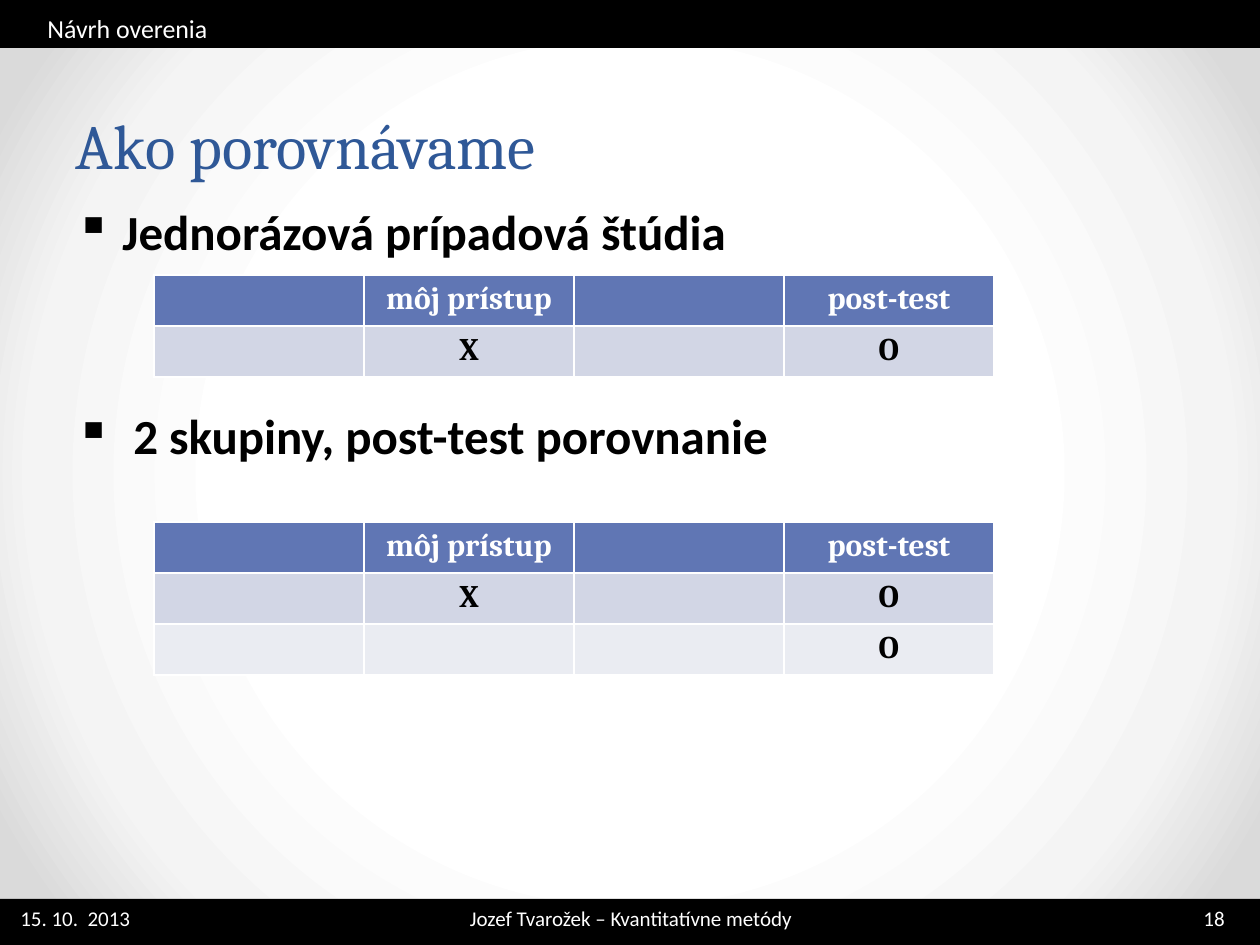
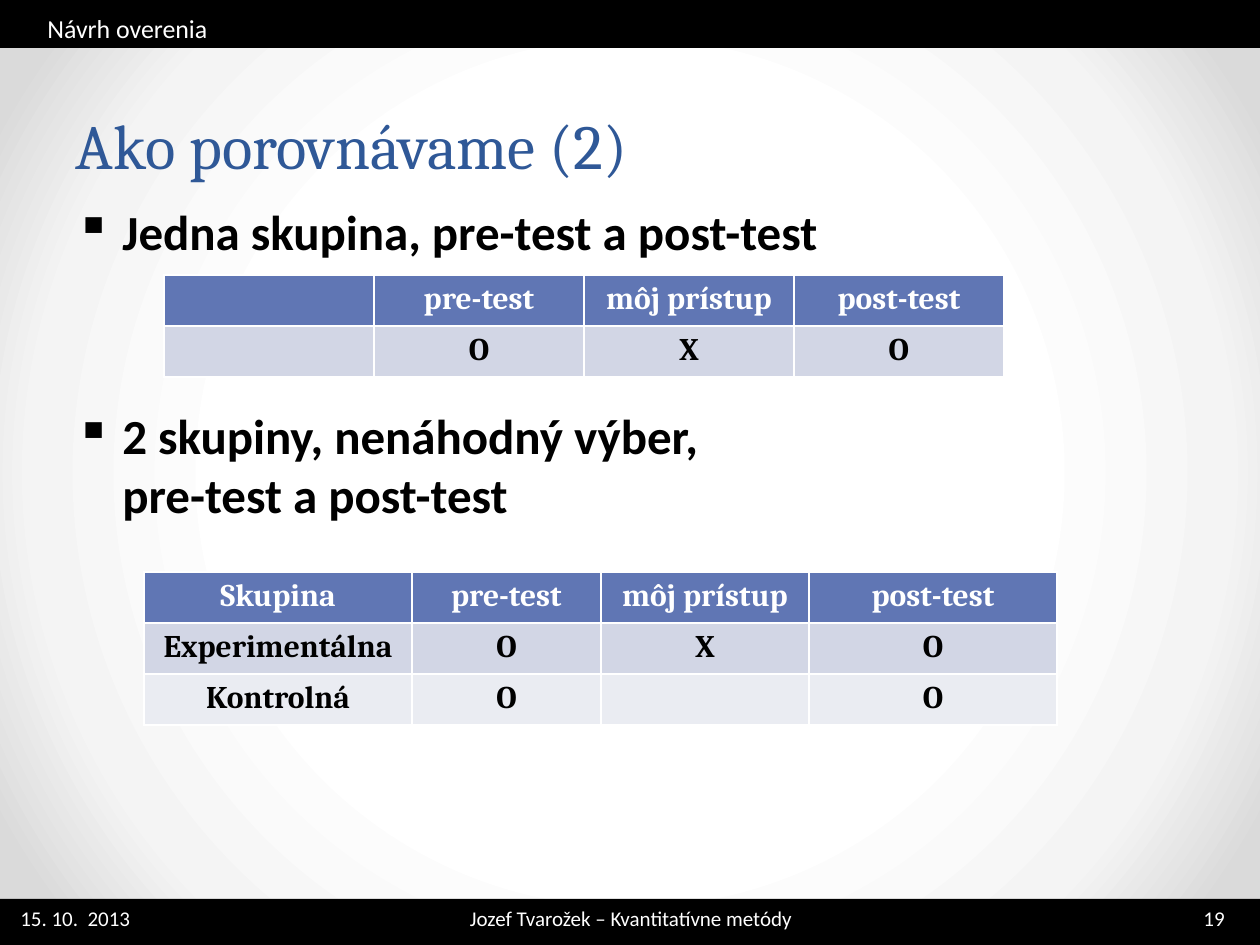
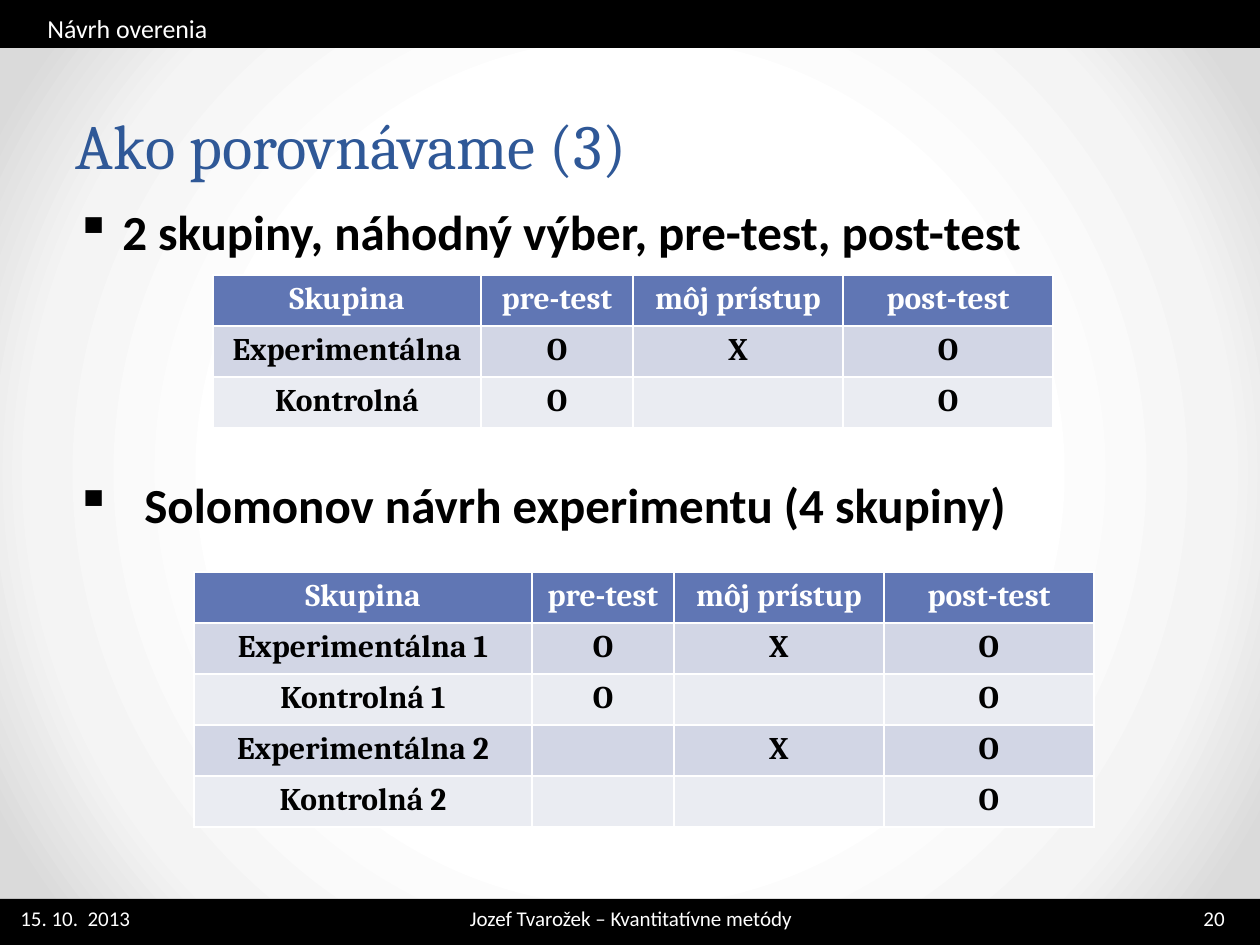
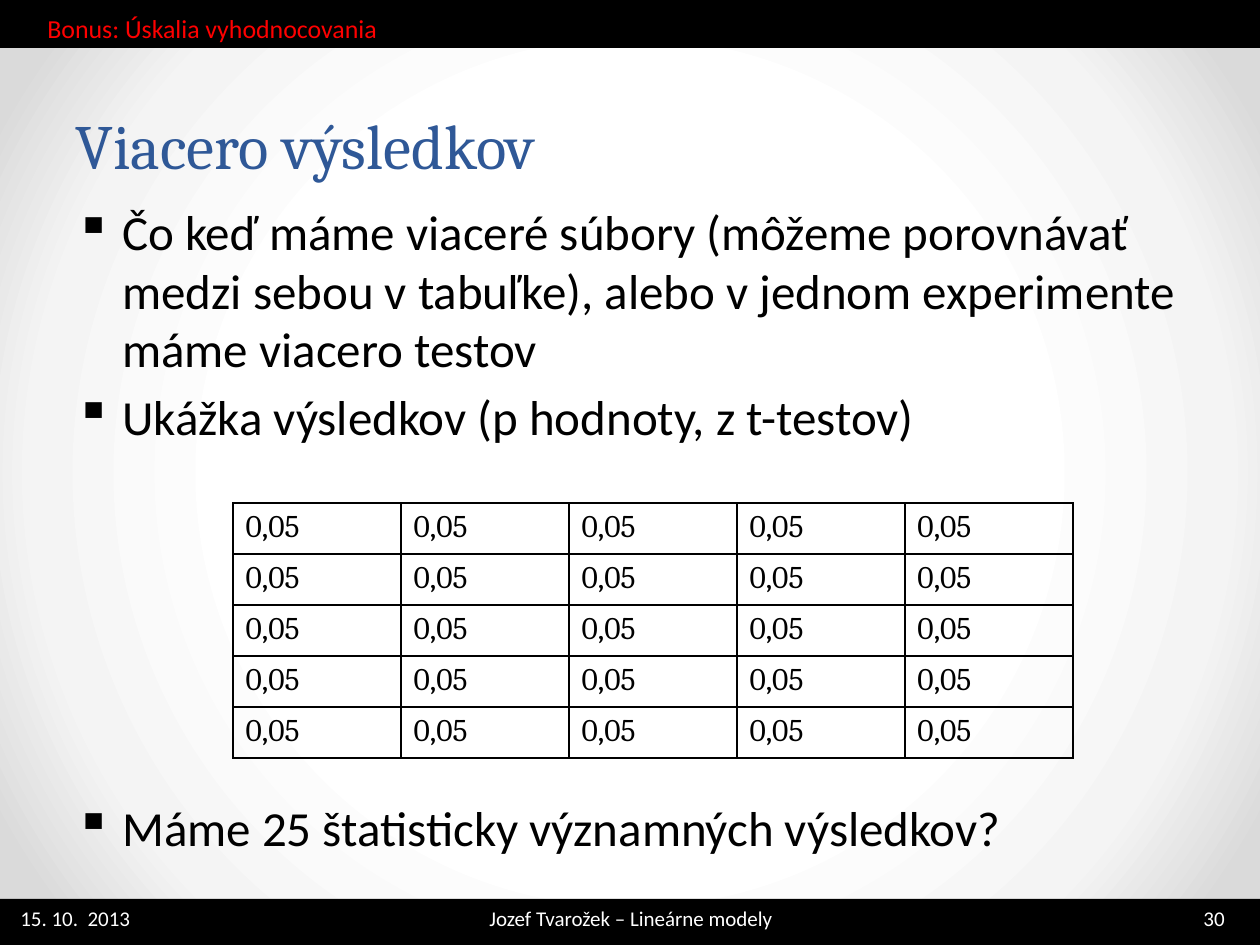
from pptx import Presentation
from pptx.dml.color import RGBColor
from pptx.enum.shapes import MSO_SHAPE
from pptx.enum.text import MSO_ANCHOR, MSO_AUTO_SIZE, PP_ALIGN
from pptx.oxml import parse_xml
from pptx.oxml.ns import nsdecls, qn
from pptx.util import Emu, Pt

RECT = MSO_SHAPE.RECTANGLE
MIDDLE = MSO_ANCHOR.MIDDLE
NO_FIT = MSO_AUTO_SIZE.NONE
LEFT, CENTER = PP_ALIGN.LEFT, PP_ALIGN.CENTER

SCALE = 914400 / 126
SLIDE_W, SLIDE_H = 1260, 945
BAND_H, FOOT_Y = 48, 899
ROW_H = 51
COLORS = {
    "band": "000000", "text": "000000", "light": "FFFFFF", "title": "2F5897",
    "alert": "FF0000", "header": "6076B4", "odd": "D2D6E5", "even": "EAECF2",
}
BODY_FONT, HEAD_FONT = "Calibri", "Cambria"
BACKDROP = [(50, "FFFFFF"), (76, "F4F4F4"), (92, "DADADA")]
BODY_BOX = (63, 195, 1134, 684)
HANG = 47
BULLET_GAP, BLANK_LINE = 5, 39.2

DATE = "15. 10.  2013"
DESIGN = "Návrh overenia"
METHODS = "Jozef Tvarožek – Kvantitatívne metódy"
GROUPS = ["Skupina", "pre-test", "môj prístup", "post-test"]

SLIDES = [
    dict(number=18, title="Ako porovnávame", kicker=DESIGN, footer=METHODS,
         bullets=[("Jednorázová prípadová štúdia", 0, 0),
                  ("2 skupiny, post-test porovnanie", 2, 11)],
         tables=[(154, 275, [210] * 4,
                  [["", "môj prístup", "", "post-test"], ["", "X", "", "O"]]),
                 (154, 522, [210] * 4,
                  [["", "môj prístup", "", "post-test"], ["", "X", "", "O"],
                   ["", "", "", "O"]])]),
    dict(number=19, title="Ako porovnávame (2)", kicker=DESIGN, footer=METHODS,
         bullets=[("Jedna skupina, pre-test a post-test", 0, 0),
                  ("2 skupiny, nenáhodný výber,\vpre-test a post-test", 2, 0)],
         tables=[(164, 275, [210] * 4,
                  [["", "pre-test", "môj prístup", "post-test"],
                   ["", "O", "X", "O"]]),
                 (144, 572, [268, 189, 208, 248],
                  [GROUPS, ["Experimentálna", "O", "X", "O"],
                   ["Kontrolná", "O", "", "O"]])]),
    dict(number=20, title="Ako porovnávame (3)", kicker=DESIGN, footer=METHODS,
         bullets=[("2 skupiny, náhodný výber, pre-test, post-test", 0, 0),
                  ("Solomonov návrh experimentu (4 skupiny)", 3, 22)],
         tables=[(213, 275, [268, 152, 210, 210],
                  [GROUPS, ["Experimentálna", "O", "X", "O"],
                   ["Kontrolná", "O", "", "O"]]),
                 (194, 572, [338, 142, 210, 210],
                  [GROUPS, ["Experimentálna 1", "O", "X", "O"],
                   ["Kontrolná 1", "O", "", "O"],
                   ["Experimentálna 2", "", "X", "O"],
                   ["Kontrolná 2", "", "", "O"]])]),
    dict(number=30, title="Viacero výsledkov", kicker="Bonus: Úskalia vyhodnocovania",
         kicker_color="alert", footer="Jozef Tvarožek – Lineárne modely", bold=False,
         bullets=[("Čo keď máme viaceré súbory (môžeme porovnávať medzi sebou "
                   "v tabuľke), alebo v jednom experimente máme viacero testov", 0, 0),
                  ("Ukážka výsledkov (p hodnoty, z t-testov)", 0, 0),
                  ("Máme 25 štatisticky významných výsledkov?", 5, 0)],
         grid=(233, 503, [168] * 5, [["0,05"] * 5] * 5)),
]


def px(n):
    """Turn pixels into EMU."""
    return Emu(round(n * SCALE))


def rgb(name):
    """Return the named colour."""
    return RGBColor.from_string(COLORS[name])


def style(p, size, color, font=BODY_FONT, bold=False, align=LEFT):
    """Format a paragraph and its runs."""
    p.alignment = align
    for r in p.runs:
        r.font.size, r.font.name, r.font.bold = Pt(size), font, bold
        r.font.color.rgb = rgb(color)


def set_backdrop(master):
    """Give the master a radial gradient background."""
    master.background.fill.solid()
    stops = "".join(f'<a:gs pos="{pos * 1000}"><a:srgbClr val="{c}"/></a:gs>'
                    for pos, c in BACKDROP)
    grad = parse_xml(
        f'<a:gradFill {nsdecls("a")} rotWithShape="1"><a:gsLst>{stops}</a:gsLst>'
        '<a:path path="circle"><a:fillToRect l="50000" t="50000" r="50000" b="50000"/>'
        '</a:path></a:gradFill>')
    bg = master.element.find(".//" + qn("p:bgPr"))
    bg.replace(bg[0], grad)


def add_band(s, y):
    """Draw a full-width black band."""
    sp = s.shapes.add_shape(RECT, 0, px(y), px(SLIDE_W), px(BAND_H))
    sp.shadow.inherit = False
    sp.fill.solid()
    sp.fill.fore_color.rgb = rgb("band")
    sp.line.fill.background()


def add_text(s, box, text, size, color="light", align=LEFT):
    """Add a one-paragraph text box."""
    tf = s.shapes.add_textbox(*map(px, box)).text_frame
    tf.word_wrap = True
    tf.text = text
    style(tf.paragraphs[0], size, color, align=align)


def add_frame(s, number, kicker, footer, kicker_color):
    """Add the bands with their kicker, date, footer and number."""
    for y in (FOOT_Y, 0):
        add_band(s, y)
    add_text(s, (8, FOOT_Y, 166, 38), DATE, 12)
    add_text(s, (1191, FOOT_Y, 69, 38), str(number), 12)
    add_text(s, (35, 6, 1191, 42), kicker, 14.8, kicker_color)
    add_text(s, (333, FOOT_Y, 596, 37), footer, 12, align=CENTER)


def set_title(s, text):
    """Place and format the title placeholder."""
    sp = s.shapes.title
    sp.left, sp.top, sp.width, sp.height = map(px, (63, 87, 1134, 88))
    tf = sp.text_frame
    tf.text = text
    tf.auto_size = NO_FIT
    tf.vertical_anchor = MIDDLE
    p = tf.paragraphs[0]
    p.line_spacing = Pt(58)
    style(p, 36, "title", HEAD_FONT)


def add_bullets(s, box, bullets, bold):
    """Add bullets, each with blank lines before it and an extra indent."""
    tf = s.shapes.add_textbox(*map(px, box)).text_frame
    tf.word_wrap = True
    for i, (text, blanks, extra) in enumerate(bullets):
        p = tf.add_paragraph() if i else tf.paragraphs[0]
        p.text = text
        style(p, 28, "text", bold=bold)
        p.space_before = Pt(round(BULLET_GAP + blanks * BLANK_LINE, 1) if i else 0)
        pPr = p._p.get_or_add_pPr()
        pPr.set("marL", str(px(HANG + extra)))
        pPr.set("indent", str(-px(HANG + extra)))
        pPr.append(parse_xml(f'<a:buChar {nsdecls("a")} char="▪"/>'))


def add_table(s, x, y, cols, rows):
    """Add a table sized by its columns and text."""
    box = (x, y, sum(cols), ROW_H * len(rows))
    table = s.shapes.add_table(len(rows), len(cols), *map(px, box)).table
    for col, width in zip(table.columns, cols):
        col.width = px(width)
    for row, texts in zip(table.rows, rows):
        row.height = px(ROW_H)
        for cell, text in zip(row.cells, texts):
            cell.text = text
    return table


def add_design_table(s, *layout):
    """Add a banded table describing an experiment design."""
    for i, row in enumerate(add_table(s, *layout).rows):
        fill = "header" if i == 0 else "odd" if i % 2 else "even"
        for cell in row.cells:
            cell.fill.solid()
            cell.fill.fore_color.rgb = rgb(fill)
            style(cell.text_frame.paragraphs[0], 18, "text" if i else "light",
                  HEAD_FONT, True, CENTER)


def add_value_grid(s, *layout):
    """Add an unfilled table with black cell borders."""
    table = add_table(s, *layout)
    table.first_row = table.horz_banding = False
    for cell in table.iter_cells():
        style(cell.text_frame.paragraphs[0], 18, "text", HEAD_FONT)
        tcPr = cell._tc.get_or_add_tcPr()
        for side in "LRTB":
            tcPr.append(parse_xml(
                f'<a:ln{side} {nsdecls("a")} w="12700"><a:solidFill>'
                f'<a:srgbClr val="{COLORS["text"]}"/></a:solidFill></a:ln{side}>'))
        cell.fill.background()


def build_slide(prs, number, title, kicker, footer, bullets, tables=(), grid=None,
                kicker_color="light", bold=True):
    """Build one slide of bullets and tables."""
    s = prs.slides.add_slide(prs.slide_layouts[5])
    add_frame(s, number, kicker, footer, kicker_color)
    set_title(s, title)
    add_bullets(s, BODY_BOX, bullets, bold)
    for layout in tables:
        add_design_table(s, *layout)
    if grid:
        add_value_grid(s, *grid)


def main():
    """Build and save the deck."""
    prs = Presentation()
    prs.slide_width, prs.slide_height = px(SLIDE_W), px(SLIDE_H)
    set_backdrop(prs.slide_master)
    for content in SLIDES:
        build_slide(prs, **content)
    prs.save("out.pptx")


if __name__ == "__main__":
    main()
